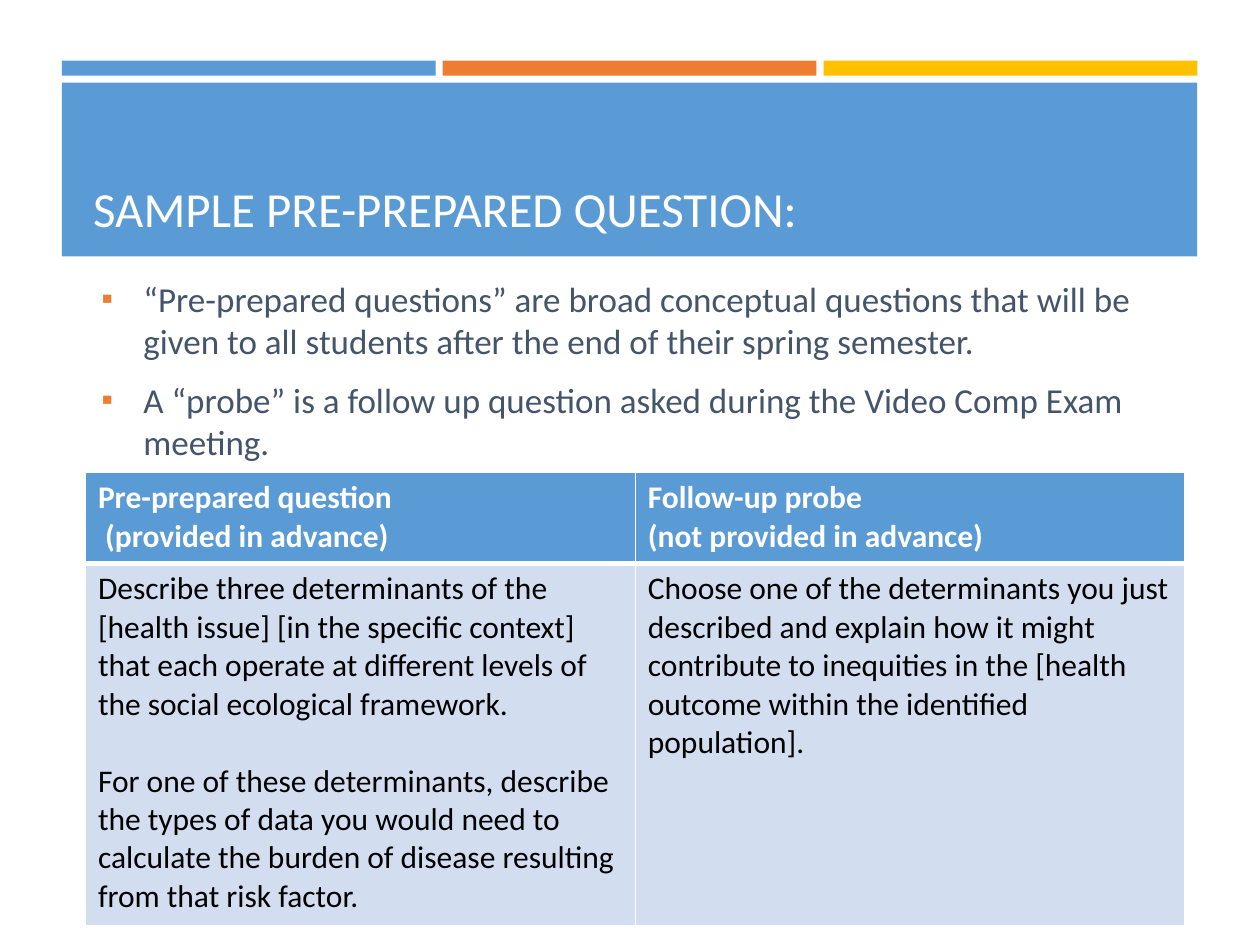
from lxml.etree import SubElement
from pptx import Presentation
from pptx.dml.color import RGBColor
from pptx.enum.shapes import MSO_SHAPE
from pptx.enum.text import MSO_ANCHOR, MSO_AUTO_SIZE, PP_ALIGN
from pptx.oxml import parse_xml
from pptx.oxml.ns import nsdecls, qn
from pptx.util import Pt

HUES = {
    "blue": "5B9BD5",
    "orange": "ED7D31",
    "gold": "FFC000",
    "white": "FFFFFF",
    "black": "000000",
    "slate": "44546A",
    "pale": "D2DEEF",
}
POINTS = [
    "“Pre-prepared questions” are broad conceptual questions that will be "
    "given to all students after the end of their spring semester.",
    "A “probe” is a follow up question asked during the Video Comp Exam meeting.",
]
HEADS = [
    ["Pre-prepared question", " (provided in advance)"],
    ["Follow-up probe", "(not provided in advance)"],
]
CELLS = [
    [
        "Describe three determinants of the [health issue] [in the specific "
        "context] that each operate at different levels of the social "
        "ecological framework.",
        "For one of these determinants, describe the types of data you would "
        "need to calculate the burden of disease resulting from that risk factor.",
    ],
    [
        "Choose one of the determinants you just described and explain how it "
        "might contribute to inequities in the [health outcome within the "
        "identified population].",
    ],
]


def color(name):
    return RGBColor.from_string(HUES[name])


def style(para, size, hue, bold=False):
    font = para.font
    font.name, font.size, font.bold = "Calibri", Pt(size), bold
    font.color.rgb = color(hue)


def write(frame, lines, size, hue, bold=False, gap=0):
    for index, line in enumerate(lines):
        para = frame.add_paragraph() if index else frame.paragraphs[0]
        para.text = line
        style(para, size, hue, bold)
        if index and gap:
            para.space_before = Pt(gap)


def add_bar(slide, left, top, width, height, hue):
    bar = slide.shapes.add_shape(
        MSO_SHAPE.RECTANGLE, Pt(left), Pt(top), Pt(width), Pt(height))
    bar.shadow.inherit = False
    bar.fill.solid()
    bar.fill.fore_color.rgb = color(hue)
    bar.line.fill.background()


def set_title(slide, text):
    title = slide.shapes.title
    title.left, title.top = Pt(46), Pt(54)
    title.width, title.height = Pt(629), Pt(85)
    frame = title.text_frame
    frame.auto_size = MSO_AUTO_SIZE.NONE
    frame.vertical_anchor = MSO_ANCHOR.BOTTOM
    write(frame, [text], 28, "white")
    frame.paragraphs[0].alignment = PP_ALIGN.LEFT
    slide.shapes.element.append(title.element)


def add_bullet(para):
    props = para._p.get_or_add_pPr()
    props.set("marL", str(Pt(49.7)))
    props.set("indent", str(Pt(-23.8)))
    tint = SubElement(props, qn("a:buClr"))
    SubElement(tint, qn("a:srgbClr"), val=HUES["orange"])
    SubElement(props, qn("a:buSzPct"), val="92000")
    SubElement(props, qn("a:buFont"), typeface="Calibri")
    SubElement(props, qn("a:buChar"), char="▪")


def add_points(slide):
    box = slide.shapes.add_textbox(Pt(25.2), Pt(154.8), Pt(669.6), Pt(115.2))
    frame = box.text_frame
    frame.word_wrap = True
    write(frame, POINTS, 20, "slate")
    for para in frame.paragraphs:
        para.space_before, para.space_after = Pt(4), Pt(6)
        add_bullet(para)


def add_edges(cell, base):
    props = cell._tc.get_or_add_tcPr()
    widths = {"L": 1, "R": 1, "T": 1, "B": base}
    for index, (side, width) in enumerate(widths.items()):
        props.insert(index, parse_xml(
            f'<a:ln{side} {nsdecls("a")} w="{Pt(width)}"><a:solidFill>'
            f'<a:srgbClr val="{HUES["white"]}"/></a:solidFill></a:ln{side}>'))


def fill_cell(cell, lines, hue, ink, bold, base, gap):
    cell.fill.solid()
    cell.fill.fore_color.rgb = color(hue)
    write(cell.text_frame, lines, 18, ink, bold, gap)
    add_edges(cell, base)


def add_grid(slide):
    grid = slide.shapes.add_table(
        2, 2, Pt(48.8), Pt(270), Pt(628.4), Pt(259)).table
    for row, height in zip(grid.rows, (52, 207)):
        row.height = Pt(height)
    for col in range(2):
        fill_cell(grid.cell(0, col), HEADS[col], "blue", "white", True, 3, 0)
        fill_cell(grid.cell(1, col), CELLS[col], "pale", "black", False, 1, 22)


def main():
    deck = Presentation()
    deck.slide_width, deck.slide_height = Pt(720), Pt(540)
    slide = deck.slides.add_slide(deck.slide_layouts[5])
    for index, hue in enumerate(("blue", "orange", "gold")):
        add_bar(slide, 35.4 + index * 217.6, 34.7, 213.6, 8.6, hue)
    add_bar(slide, 35.4, 47.3, 648.8, 99.2, "blue")
    set_title(slide, "SAMPLE PRE-PREPARED QUESTION:")
    add_grid(slide)
    add_points(slide)
    deck.save("out.pptx")


if __name__ == "__main__":
    main()
